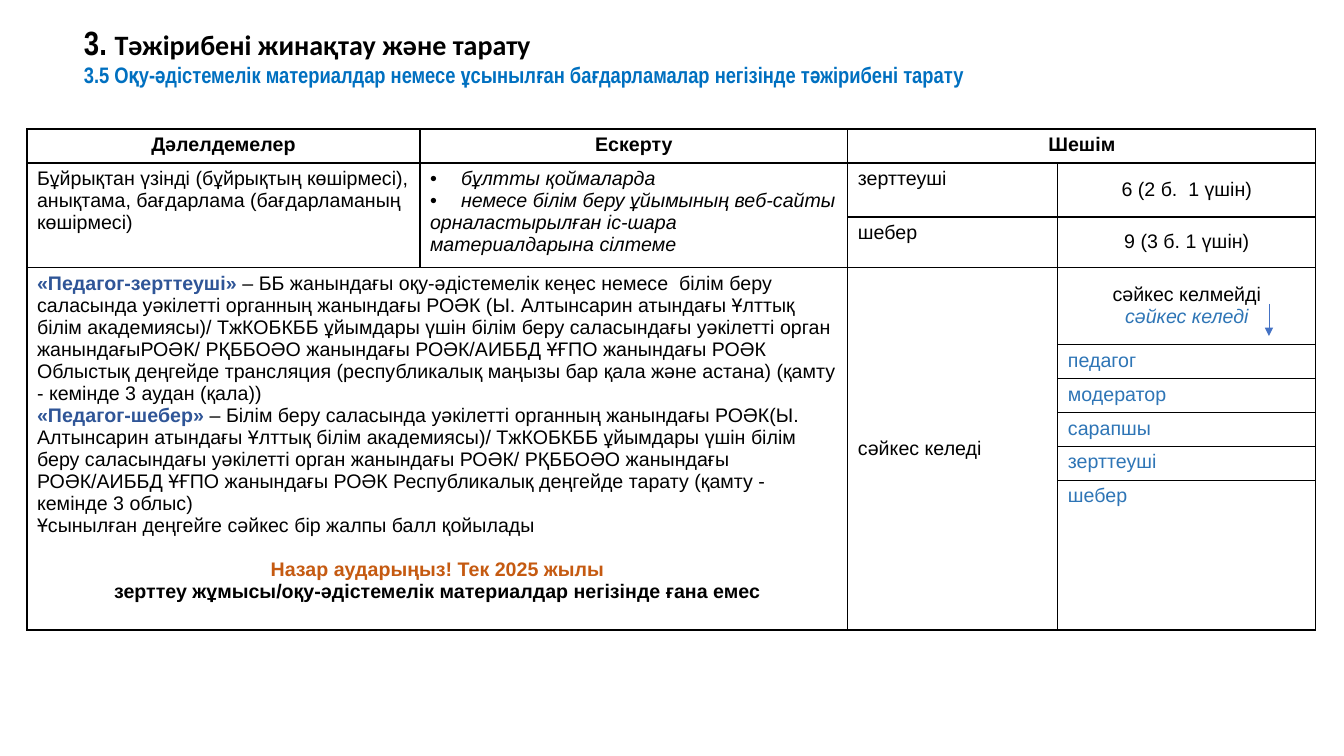
from lxml.etree import SubElement
from pptx import Presentation
from pptx.dml.color import RGBColor
from pptx.enum.shapes import MSO_CONNECTOR as Connector
from pptx.enum.text import MSO_ANCHOR as Anchor, PP_ALIGN as Align
from pptx.oxml.ns import qn
from pptx.util import Pt

EMU_PER_PX = 914400 / 100.8
BLACK, BLUE, NAVY, SKY, ORANGE, ARROW = "000000", "0070C0", "2F5597", "2E75B6", "C55A11", "4472C4"

BASE = {"name": "Arial", "size": Pt(14), "bold": False, "italic": False, "color": BLACK}
BOLD = {"bold": True}
ITALIC = {"italic": True}
LEVEL = {"bold": True, "color": NAVY}
SKY_TEXT = {"color": SKY}
CENTER = {"alignment": Align.CENTER}
MIDDLE = {"vertical_anchor": Anchor.MIDDLE}

COLUMNS = [393, 428, 210, 258]
ROWS = [34, 54, 50, 77, 34, 34, 34, 34, 150]
MERGES = [((0, 2), (0, 3)), ((1, 0), (2, 0)), ((1, 1), (2, 1)), ((3, 0), (8, 1)), ((3, 2), (8, 2))]
HEADERS = {0: "Дәлелдемелер", 1: "Ескерту", 2: "Шешім"}
SCORES = [("зерттеуші", "6 (2 б.  1 үшін)"), ("шебер", "9 (3 б. 1 үшін)")]
GRADES = ["педагог", "модератор", "сарапшы", "зерттеуші", "шебер"]

EVIDENCE = "Бұйрықтан үзінді (бұйрықтың көшірмесі), анықтама, бағдарлама (бағдарламаның көшірмесі)"
RESEARCHER = (
    "– ББ жанындағы оқу-әдістемелік кеңес немесе  білім беру саласында уәкілетті органның "
    "жанындағы РОӘК (Ы. Алтынсарин атындағы Ұлттық білім академиясы)/ ТжКОБКББ ұйымдары үшін "
    "білім беру саласындағы уәкілетті орган жанындағыРОӘК/ РҚББОӘО жанындағы РОӘК/АИББД ҰҒПО "
    "жанындағы РОӘК"
)
REGIONAL = (
    "Облыстық деңгейде трансляция (республикалық маңызы бар қала және астана) "
    "(қамту - кемінде 3 аудан (қала))"
)
MASTER = (
    "– Білім беру саласында уәкілетті органның жанындағы РОӘК(Ы. Алтынсарин атындағы Ұлттық "
    "білім академиясы)/ ТжКОБКББ ұйымдары үшін білім беру саласындағы уәкілетті орган жанындағы "
    "РОӘК/ РҚББОӘО жанындағы РОӘК/АИББД ҰҒПО жанындағы РОӘК Республикалық деңгейде тарату "
    "(қамту - кемінде 3 облыс)"
)


def px(length):
    return round(length * EMU_PER_PX)


def rgb(value):
    return RGBColor.from_string(value)


def apply(target, formats):
    for name, value in formats.items():
        if name == "color":
            target.color.rgb = rgb(value)
        else:
            setattr(target, name, value)


def line(text, formats={}, layout={}, bullet=False):
    return [(text, formats)], layout, bullet


def add_bullet(paragraph):
    properties = paragraph._p.get_or_add_pPr()
    properties.set("marL", str(px(31)))
    properties.set("indent", str(-px(31)))
    SubElement(properties, qn("a:buFont"), typeface="Arial")
    SubElement(properties, qn("a:buChar"), char="•")


def write(frame, lines):
    for index, (runs, layout, bullet) in enumerate(lines):
        paragraph = frame.add_paragraph() if index else frame.paragraphs[0]
        apply(paragraph, layout)
        if bullet:
            add_bullet(paragraph)
        for text, formats in runs:
            run = paragraph.add_run()
            run.text = text
            apply(run.font, {**BASE, **formats})


def add_text(slide, left, top, width, height, lines, frame_formats):
    frame = slide.shapes.add_textbox(px(left), px(top), px(width), px(height)).text_frame
    apply(frame, {"word_wrap": True, **frame_formats})
    write(frame, lines)


def add_borders(cell):
    properties = cell._tc.get_or_add_tcPr()
    for side in ("lnL", "lnR", "lnT", "lnB"):
        border = SubElement(properties, qn(f"a:{side}"), w=str(Pt(1)))
        fill = SubElement(border, qn("a:solidFill"))
        SubElement(fill, qn("a:srgbClr"), val=BLACK)


def add_grid(slide, left, top):
    frame = slide.shapes.add_table(
        len(ROWS), len(COLUMNS), px(left), px(top), px(sum(COLUMNS)), px(sum(ROWS))
    )
    table = frame.table
    apply(table, {"first_row": False, "horz_banding": False})
    for column, width in zip(table.columns, COLUMNS):
        column.width = px(width)
    for row, height in zip(table.rows, ROWS):
        row.height = px(height)
    for cell in table.iter_cells():
        add_borders(cell)
        cell.fill.background()
    for start, end in MERGES:
        table.cell(*start).merge(table.cell(*end))
    return table


def fill_cell(table, row, column, lines, formats={}):
    cell = table.cell(row, column)
    apply(cell, formats)
    write(cell.text_frame, lines)


def fill_table(table):
    for column, text in HEADERS.items():
        fill_cell(table, 0, column, [line(text, BOLD, CENTER)])
    fill_cell(table, 1, 0, [line(EVIDENCE)])
    fill_cell(table, 1, 1, [
        line("бұлтты қоймаларда", ITALIC, bullet=True),
        line("немесе білім беру ұйымының веб-сайты", ITALIC, bullet=True),
        line("орналастырылған іс-шара материалдарына сілтеме", ITALIC),
    ])
    for row, (grade, score) in enumerate(SCORES, 1):
        fill_cell(table, row, 2, [line(grade)])
        fill_cell(table, row, 3, [line(score, layout=CENTER)], MIDDLE)
    fill_cell(table, 3, 0, [
        ([("«Педагог-зерттеуші» ", LEVEL), (RESEARCHER, {})], {}, False),
        line(REGIONAL),
        ([("«Педагог-шебер» ", LEVEL), (MASTER, {})], {}, False),
        line("Ұсынылған деңгейге сәйкес бір жалпы балл қойылады"),
        line("Назар аударыңыз! Тек 2025 жылы", {**BOLD, "color": ORANGE},
             {**CENTER, "space_before": Pt(16)}),
        line("зерттеу жұмысы/оқу-әдістемелік материалдар негізінде ғана емес", BOLD, CENTER),
    ])
    fill_cell(table, 3, 2, [line("сәйкес келеді")], MIDDLE)
    fill_cell(table, 3, 3, [
        line("сәйкес келмейді", layout=CENTER),
        line("сәйкес келеді", {**SKY_TEXT, **ITALIC}, CENTER),
    ], MIDDLE)
    for row, grade in enumerate(GRADES, 4):
        fill_cell(table, row, 3, [line(grade, SKY_TEXT)])


def add_arrow(slide, left, top, bottom):
    arrow = slide.shapes.add_connector(Connector.STRAIGHT, px(left), px(top), px(left), px(bottom))
    apply(arrow.line, {"width": Pt(0.5), "color": ARROW})
    SubElement(arrow.line._get_or_add_ln(), qn("a:tailEnd"), type="triangle")
    SubElement(arrow._element.spPr, qn("a:effectLst"))


def main():
    presentation = Presentation()
    apply(presentation, {"slide_width": px(1344), "slide_height": px(756)})
    slide = presentation.slides.add_slide(presentation.slide_layouts[6])
    narrow = {"name": "Arial Narrow", "bold": True}
    title = [
        ("3. ", {**narrow, "size": Pt(24)}),
        ("Тәжірибені жинақтау және тарату", {"name": "Calibri", "size": Pt(20), "bold": True}),
    ]
    add_text(slide, 74, 15, 1159, 59, [(title, {"line_spacing": 0.9}, False)], MIDDLE)
    subtitle = "3.5 Оқу-әдістемелік материалдар немесе ұсынылған бағдарламалар негізінде тәжірибені тарату"
    add_text(slide, 74, 56, 1219, 37, [line(subtitle, {**narrow, "size": Pt(16), "color": BLUE})], {})
    fill_table(add_grid(slide, 27, 129))
    add_arrow(slide, 1269, 304, 336)
    presentation.save("out.pptx")


if __name__ == "__main__":
    main()
